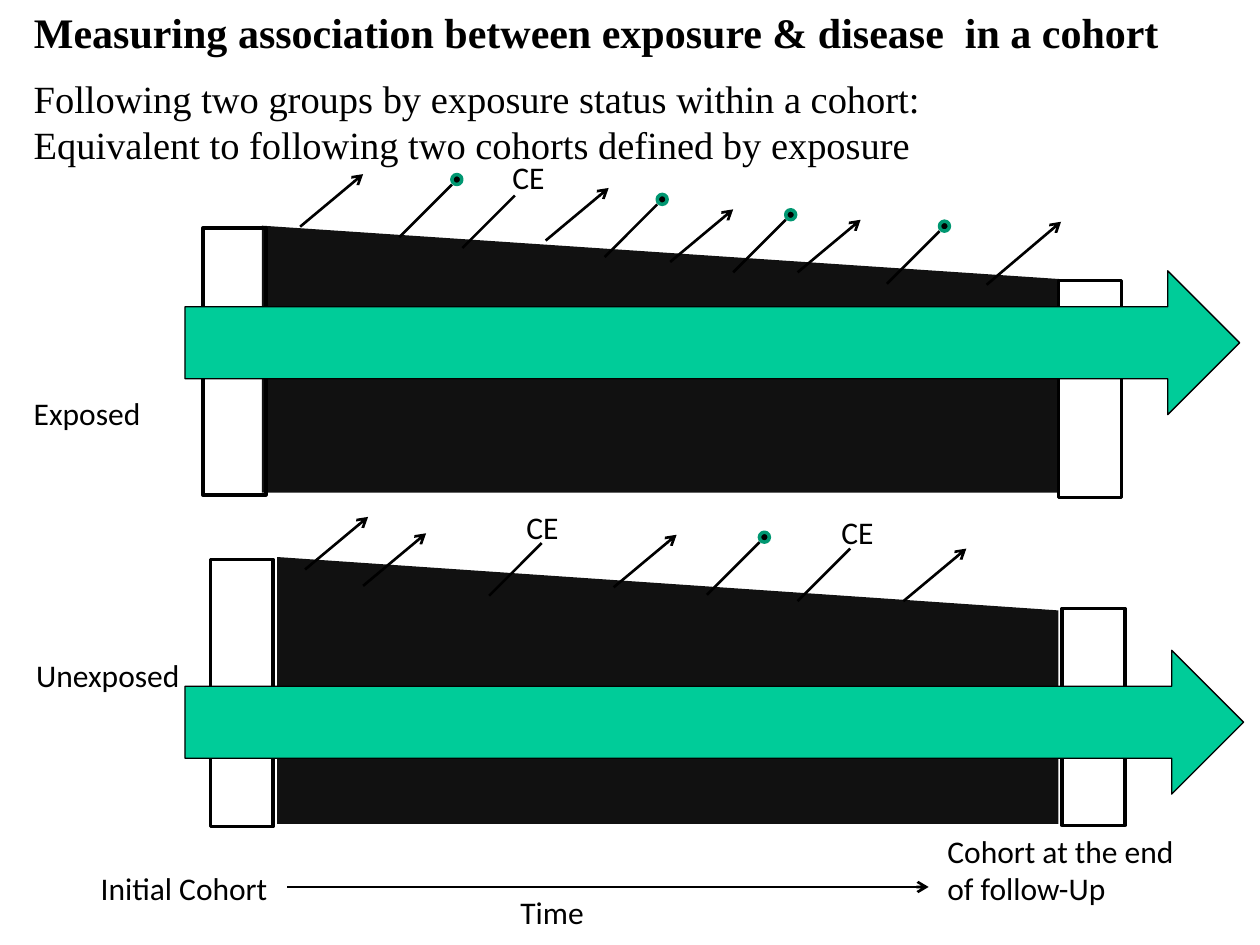
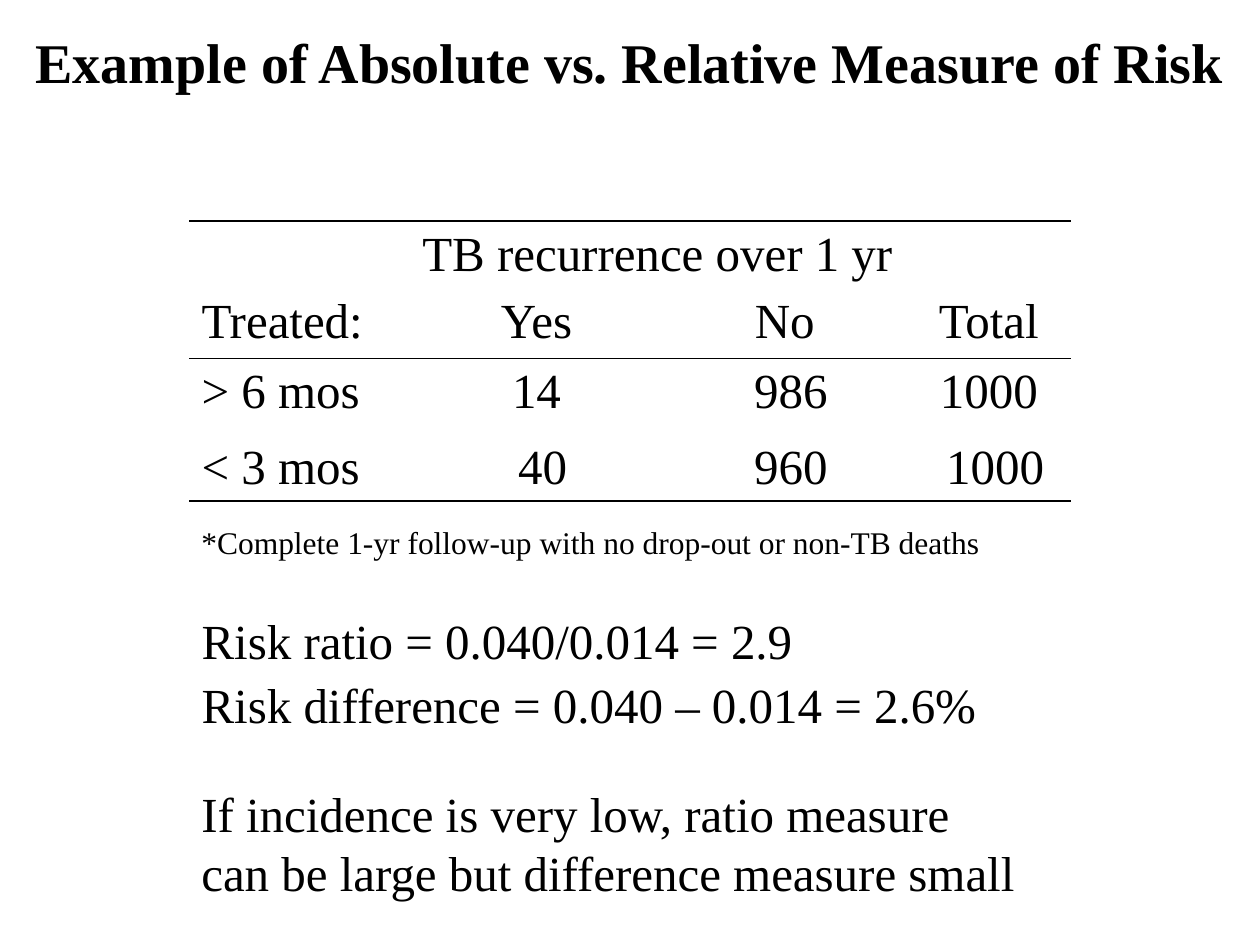
from lxml import etree
from pptx import Presentation
from pptx.dml.color import RGBColor
from pptx.enum.shapes import MSO_CONNECTOR, MSO_SHAPE
from pptx.enum.text import MSO_ANCHOR, MSO_AUTO_SIZE, PP_ALIGN
from pptx.oxml.ns import qn
from pptx.util import Cm, Pt

BOX, DOT = MSO_SHAPE.RECTANGLE, MSO_SHAPE.OVAL
BAND, FLOW = MSO_SHAPE.FLOWCHART_MANUAL_INPUT, MSO_SHAPE.RIGHT_ARROW
STRAIGHT = MSO_CONNECTOR.STRAIGHT
LEFT, CENTER = PP_ALIGN.LEFT, PP_ALIGN.CENTER
TOP, MIDDLE = MSO_ANCHOR.TOP, MSO_ANCHOR.MIDDLE
NO_FIT, GROW = MSO_AUTO_SIZE.NONE, MSO_AUTO_SIZE.SHAPE_TO_FIT_TEXT

COLORS = {"ink": "000000", "band": "111111", "flow": "00CC99", "event": "009771"}
SERIF, SANS = "Times New Roman", "Calibri"
TITLE_ONLY = 5
RISE = 1.06  # height of every slanted mark, in cm
DOT_SIZE = 0.2

# Slanted marks are given by their starting points; competing events ("CE")
# also carry the corner of their label.
GROUPS = [
    dict(name="Exposed", name_at=(0.43, 7.82, 2.69, 1.02),
         band=(5.28, 4.55, 16.08, 5.38),
         initial=(4.09, 4.6, 1.27, 5.38), final=(21.34, 5.66, 1.27, 4.37),
         flow=(3.73, 5.46, 21.26, 2.9),
         losses=[(6.05, 4.57), (11, 4.85), (13.51, 5.28), (16.08, 5.49)],
         events=[(8.05, 4.78), (12.19, 5.18), (14.78, 5.49), (17.88, 5.72)],
         competing=[((9.32, 5), (10.08, 3.07))]),
    dict(name="Unexposed", name_at=(0.48, 13.11, 3.43, 1.02),
         band=(5.59, 11.23, 15.75, 5.38),
         initial=(4.24, 11.28, 1.27, 5.38), final=(21.41, 12.27, 1.27, 4.37),
         flow=(3.73, 13.11, 21.34, 2.9),
         losses=[(6.15, 11.48), (7.32, 11.81), (12.37, 11.84), (18.21, 12.12)],
         events=[(14.25, 11.99)],
         competing=[((9.86, 12.01), (10.36, 10.11)),
                    ((16.08, 12.12), (16.71, 10.21))]),
]

RISK_ROWS = [
    ["", "TB recurrence over 1 yr", "", ""],
    ["Treated:", "Yes", "No", "Total"],
    ["> 6 mos", "14", " 986", "1000"],
    ["< 3 mos", " 40", " 960", " 1000"],
    ["", "", "", ""],
    ["Risk ratio = 0.040/0.014 = 2.9\nRisk difference = 0.040 – 0.014 = 2.6%", "", "", ""],
]
COLUMN_WIDTHS = [4.45, 5.11, 4.9, 3.33]
ROW_HEIGHTS = [1.35, 1.42, 1.52, 1.35, 2.18, 3.28]
RULED_EDGES = {0, 2, 4}


def color(key):
    return RGBColor.from_string(COLORS[key])


def lengths(values):
    return [Cm(value) for value in values]


class Deck:
    """The presentation, its style and the slide being filled."""

    def __init__(self):
        self.prs = Presentation()
        self.prs.slide_width, self.prs.slide_height = Cm(25.4), Cm(19.05)
        self.slide = None

    def start_slide(self, heading, place, size, align, anchor):
        self.slide = self.prs.slides.add_slide(self.prs.slide_layouts[TITLE_ONLY])
        title = self.slide.shapes.title
        title.left, title.top, title.width, title.height = lengths(place)
        frame = title.text_frame
        frame.text = heading
        frame.auto_size, frame.vertical_anchor = NO_FIT, anchor
        self.style_text(frame, size, SERIF, align, bold=True)

    def style_text(self, frame, size, font, align=LEFT, bold=False):
        for paragraph in frame.paragraphs:
            paragraph.alignment = align
            for run in paragraph.runs:
                run.font.name, run.font.size, run.font.bold = font, Pt(size), bold
                run.font.color.rgb = color("ink")

    def text(self, words, place, size=18, font=SANS, wrap=False):
        frame = self.slide.shapes.add_textbox(*lengths(place)).text_frame
        frame.text = words
        frame.word_wrap, frame.auto_size = wrap, GROW
        self.style_text(frame, size, font)

    def shape(self, preset, place, fill=None, line=None, weight=2):
        shape = self.slide.shapes.add_shape(preset, *lengths(place))
        shape.shadow.inherit = False
        if fill:
            shape.fill.solid()
            shape.fill.fore_color.rgb = color(fill)
        else:
            shape.fill.background()
        if line:
            shape.line.color.rgb = color(line)
            shape.line.width = Pt(weight)
        else:
            shape.line.fill.background()
        return shape

    def band(self, place):
        """Draw the cohort that shrinks from left to right."""
        band = self.shape(BAND, place, fill="band")
        band._element.spPr.find(qn("a:xfrm")).set("flipH", "1")

    def line(self, start, end, arrow=False):
        line = self.slide.shapes.add_connector(STRAIGHT, *lengths(start + end))
        line.line.color.rgb = color("ink")
        line.line.width = Pt(1.5)
        properties = line._element.spPr
        if arrow:
            etree.SubElement(properties.find(qn("a:ln")), qn("a:tailEnd"), type="arrow")
        etree.SubElement(properties, qn("a:effectLst"))

    def mark(self, start, run=RISE, rise=RISE, arrow=False):
        """Draw a line rising to the right and return its upper end."""
        end = (start[0] + run, start[1] - rise)
        self.line(start, end, arrow)
        return end

    def table(self, rows, place, widths, heights, ruled_edges):
        table = self.slide.shapes.add_table(len(rows), len(widths), *lengths(place)).table
        table.first_row = table.horz_banding = False
        for column, width in zip(table.columns, widths):
            column.width = Cm(width)
        for r, words in enumerate(rows):
            table.rows[r].height = Cm(heights[r])
            for c, word in enumerate(words):
                cell = table.cell(r, c)
                cell.text = word
                centered = c > 0 and r > 0
                self.style_text(cell.text_frame, 28, SERIF, CENTER if centered else LEFT)
                for later in cell.text_frame.paragraphs[1:]:
                    later.space_before = Pt(5.6)
                self.rule_cell(cell, r in ruled_edges, r + 1 in ruled_edges)
                cell.fill.background()
        return table

    def rule_cell(self, cell, above, below):
        properties = cell._tc.get_or_add_tcPr()
        for side, ruled in (("L", False), ("R", False), ("T", above), ("B", below)):
            border = etree.SubElement(properties, qn(f"a:ln{side}"), w=str(Pt(1)))
            if ruled:
                fill = etree.SubElement(border, qn("a:solidFill"))
                etree.SubElement(fill, qn("a:srgbClr"), val=COLORS["ink"])
            else:
                etree.SubElement(border, qn("a:noFill"))


def draw_group(deck, group):
    deck.band(group["band"])
    for end_box in ("initial", "final"):
        deck.shape(BOX, group[end_box], line="ink")
    for start in group["losses"]:
        deck.mark(start, run=1.27, arrow=True)
    for start in group["events"]:
        x, y = deck.mark(start)
        deck.shape(DOT, (x, y - DOT_SIZE, DOT_SIZE, DOT_SIZE), "ink", "event")
    for start, label_at in group["competing"]:
        deck.mark(start)
        deck.text("CE", label_at + (1.17, 1.02))
    deck.text(group["name"], group["name_at"])
    deck.shape(FLOW, group["flow"], "flow", "ink", weight=0.75)


def cohort_slide(deck):
    deck.start_slide("Measuring association between exposure & disease  in a cohort",
                     (0.43, 0, 24.61, 1.3), 24, LEFT, TOP)
    deck.text("Following two groups by exposure status within a cohort:\n"
              "Equivalent to following two cohorts defined by exposure",
              (0.43, 1.38, 24.61, 2.2), 22, SERIF, wrap=True)
    for group in GROUPS:
        draw_group(deck, group)
    deck.mark((19.89, 5.74), run=1.5, rise=1.27, arrow=True)
    deck.text("Initial Cohort", (1.78, 17.4, 3.91, 1.02))
    deck.line((5.79, 17.88), (18.72, 17.88), arrow=True)
    deck.text("Time", (10.24, 17.88, 1.8, 1.02))
    deck.text("Cohort at the end\nof follow-Up", (18.85, 16.64, 5.13, 1.8))


def risk_slide(deck):
    deck.start_slide("Example of Absolute vs. Relative Measure of Risk",
                     (0, -0.36, 25.4, 3.18), 32, CENTER, MIDDLE)
    risks = deck.table(RISK_ROWS, (3.81, 4.46, 17.79, 11.1),
                       COLUMN_WIDTHS, ROW_HEIGHTS, RULED_EDGES)
    risks.cell(0, 1).merge(risks.cell(0, 2))
    risks.cell(5, 0).merge(risks.cell(5, 3))
    deck.text("If incidence is very low, ratio measure\n"
              "can be large but difference measure small",
              (3.81, 15.67, 16.94, 2.62), 28, SERIF)
    deck.text("*Complete 1-yr follow-up with no drop-out or non-TB deaths",
              (3.81, 10.41, 17.45, 1.02), 18, SERIF, wrap=True)


def main():
    deck = Deck()
    cohort_slide(deck)
    risk_slide(deck)
    deck.prs.save("out.pptx")


if __name__ == "__main__":
    main()
